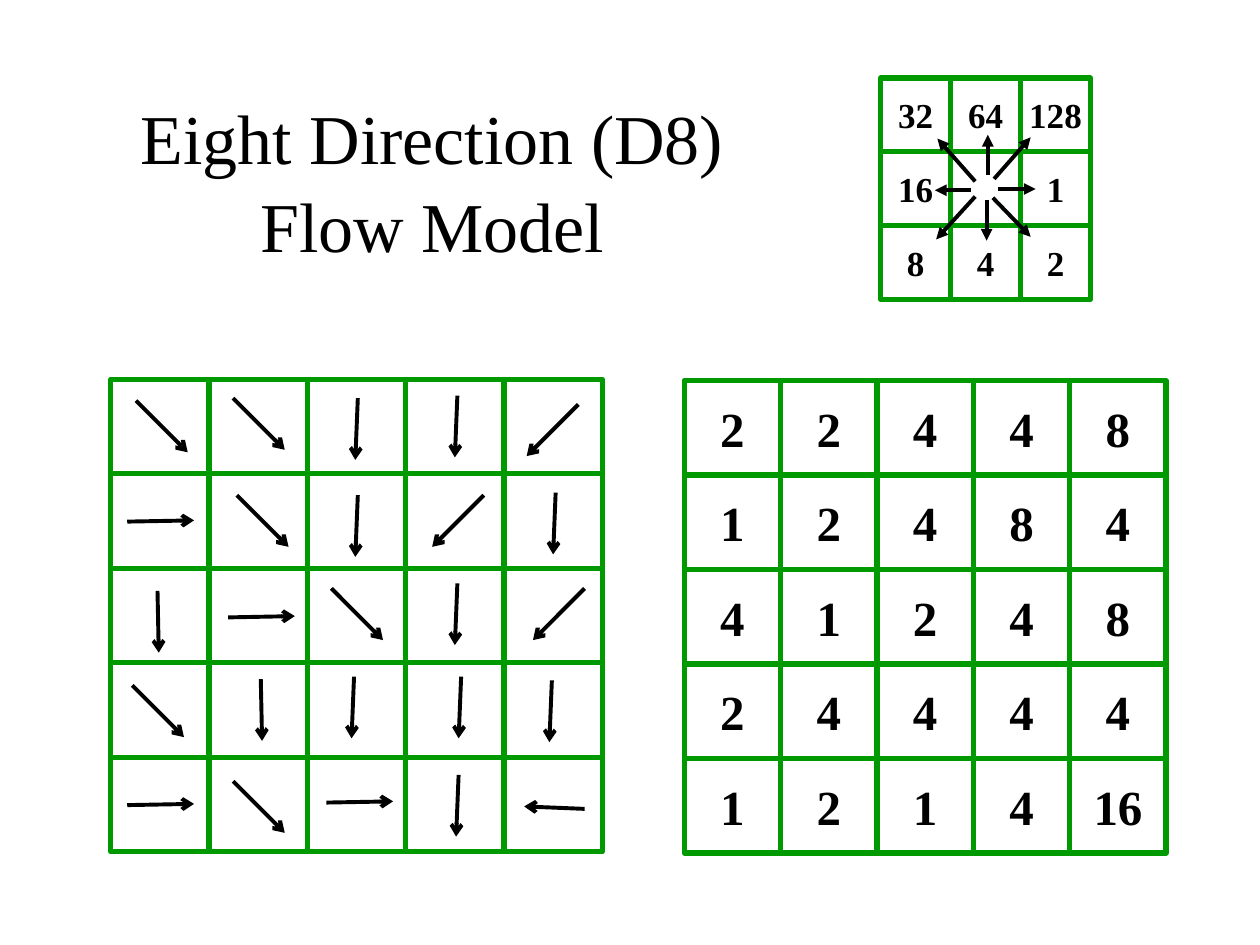
from lxml.etree import SubElement
from pptx import Presentation
from pptx.dml.color import RGBColor
from pptx.enum.shapes import MSO_CONNECTOR, MSO_SHAPE
from pptx.enum.text import MSO_ANCHOR, PP_ALIGN
from pptx.oxml.ns import qn
from pptx.util import Inches, Pt

GREEN = RGBColor(0x00, 0x99, 0x00)
BLACK = RGBColor(0x00, 0x00, 0x00)
FONT = "Times New Roman"

# Codes around the centre cell
KEY_CODES = [
    [32, 64, 128],
    [16, None, 1],
    [8, 4, 2],
]

# Start and end of the arrow pointing at each code
KEY_ARROWS = {
    64: ((7.84, 1.39), (7.84, 1.07)),
    2: ((7.88, 1.57), (8.18, 1.88)),
    128: ((7.89, 1.42), (8.18, 1.09)),
    8: ((7.74, 1.56), (7.43, 1.9)),
    4: ((7.83, 1.59), (7.83, 1.91)),
    16: ((7.71, 1.51), (7.42, 1.51)),
    1: ((7.92, 1.5), (8.22, 1.5)),
    32: ((7.74, 1.44), (7.44, 1.1)),
}

# Flow direction code of each cell
FLOW_CODES = [
    [2, 2, 4, 4, 8],
    [1, 2, 4, 8, 4],
    [4, 1, 2, 4, 8],
    [2, 4, 4, 4, 4],
    [1, 2, 1, 4, 16],
]

# Arrow run, in inches, for each code
FLOW_STEPS = {
    1: (0.53, -0.01),
    2: (0.41, 0.41),
    4: (-0.02, 0.49),
    8: (-0.41, 0.41),
    16: (-0.48, -0.02),
}

# Where the arrow of each cell starts
FLOW_STARTS = [
    [(1.08, 3.18), (1.85, 3.16), (2.84, 3.16), (3.63, 3.14), (4.59, 3.21)],
    [(1.01, 4.14), (1.88, 3.93), (2.84, 3.93), (3.84, 3.93), (4.41, 3.91)],
    [(1.25, 4.69), (1.81, 4.9), (2.63, 4.67), (3.63, 4.63), (4.64, 4.67)],
    [(1.05, 5.44), (2.07, 5.39), (2.81, 5.37), (3.66, 5.37), (4.38, 5.4)],
    [(1.01, 6.39), (1.85, 6.2), (2.59, 6.37), (3.64, 6.15), (4.64, 6.42)],
]

# Arrows in the two left columns that lean right instead of left
LEANING_RIGHT = {(2, 0), (3, 1)}


def add_text(paragraph, text, size, bold=False):
    paragraph.alignment = PP_ALIGN.CENTER
    run = paragraph.add_run()
    run.text = text
    run.font.name = FONT
    run.font.size = Pt(size)
    run.font.bold = bold
    run.font.color.rgb = BLACK


def add_title(slide):
    title = slide.shapes.add_textbox(
        Inches(0.75), Inches(0.67), Inches(5.36), Inches(1.45))
    title.text_frame.word_wrap = True
    paragraph = title.text_frame.paragraphs[0]
    paragraph.line_spacing = 1.05
    add_text(paragraph, "Eight Direction (D8) Flow Model", 40)


def add_cell(group, left, top, width, height, code, size):
    cell = group.shapes.add_shape(
        MSO_SHAPE.RECTANGLE,
        Inches(left), Inches(top), Inches(width), Inches(height))
    cell.shadow.inherit = False
    cell.fill.background()
    cell.line.color.rgb = GREEN
    cell.line.width = Pt(3)
    if code is not None:
        frame = cell.text_frame
        frame.word_wrap = False
        frame.vertical_anchor = MSO_ANCHOR.MIDDLE
        add_text(frame.paragraphs[0], str(code), size, bold=True)


def add_grid(slide, left, top, width, height, codes, size=28):
    """Add one bordered cell per code and return their group."""
    group = slide.shapes.add_group_shape()
    for row, row_codes in enumerate(codes):
        for column, code in enumerate(row_codes):
            add_cell(group, left + column * width, top + row * height,
                     width, height, code, size)
    return group


def add_arrow(group, start, end, head):
    arrow = group.shapes.add_connector(
        MSO_CONNECTOR.STRAIGHT, *map(Inches, (*start, *end)))
    arrow.line.color.rgb = BLACK
    arrow.line.width = Pt(2.25)
    SubElement(arrow.line._get_or_add_ln(), qn("a:tailEnd"), type=head)
    SubElement(arrow._element.spPr, qn("a:effectLst"))


def add_flow_arrows(group):
    for row, starts in enumerate(FLOW_STARTS):
        for column, (x, y) in enumerate(starts):
            dx, dy = FLOW_STEPS[FLOW_CODES[row][column]]
            if (row, column) in LEANING_RIGHT:
                dx = 0.01
            add_arrow(group, (x, y), (x + dx, y + dy), "arrow")


def main():
    presentation = Presentation()
    presentation.slide_width = Inches(10)
    presentation.slide_height = Inches(7.5)
    slide = presentation.slides.add_slide(presentation.slide_layouts[6])

    # Grid of direction codes
    add_grid(slide, 5.43, 3.02, 0.765, 0.75, FLOW_CODES)

    add_title(slide)

    # Key to the eight directions
    key = add_grid(slide, 6.99, 0.62, 0.555, 0.585, KEY_CODES, size=20)
    for start, end in KEY_ARROWS.values():
        add_arrow(key, start, end, "triangle")

    # Grid of flow arrows
    flow = add_grid(slide, 0.88, 3.01, 0.78, 0.75, [[None] * 5] * 5)
    add_flow_arrows(flow)

    presentation.save("out.pptx")


if __name__ == "__main__":
    main()
